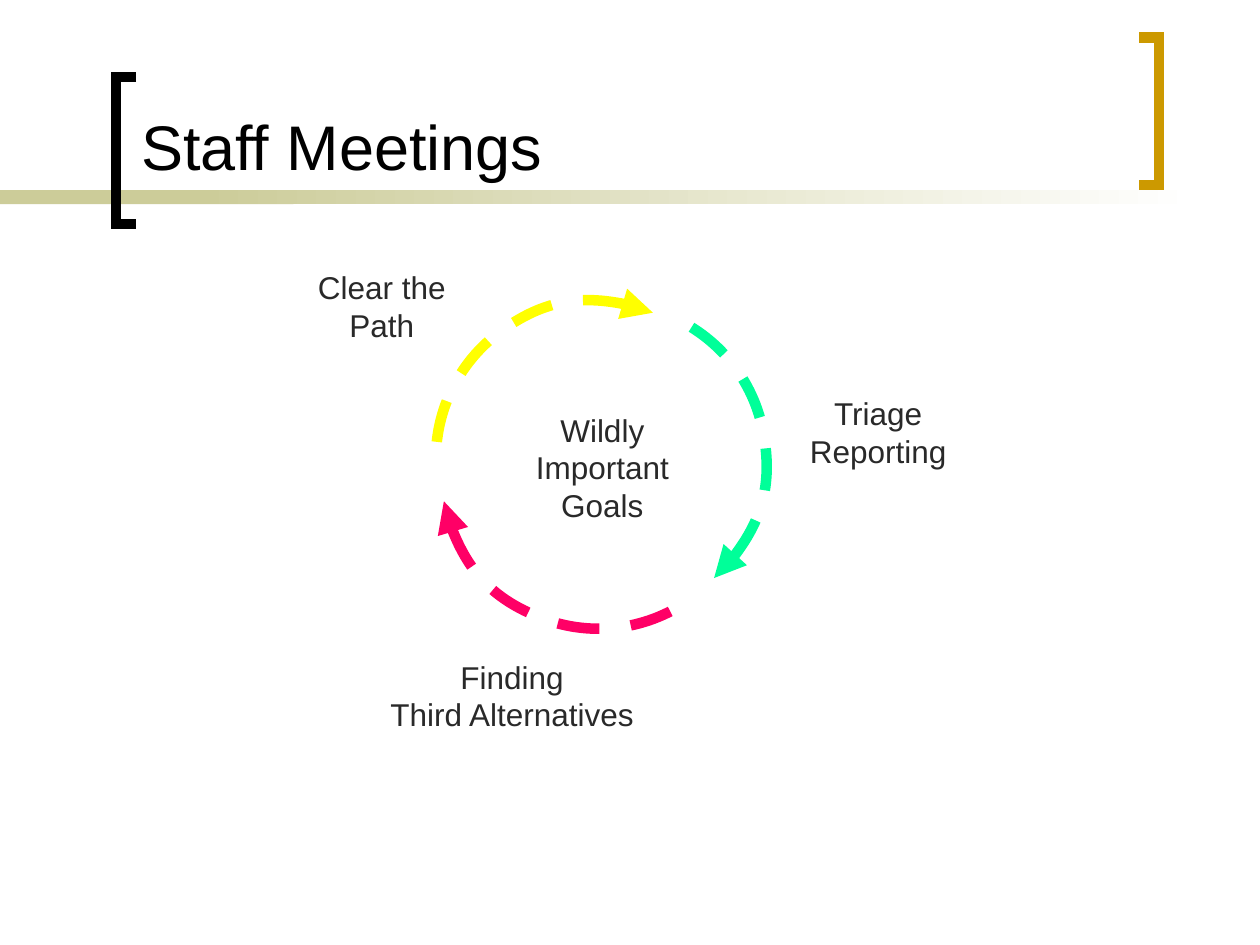
"""Build the Staff Meetings slide: a cycle of three dashed arrows around the goals."""
from math import cos, radians, sin, tan

from pptx import Presentation
from pptx import util as u
from pptx.dml.color import RGBColor
from pptx.enum import dml, shapes, text
from pptx.oxml.ns import qn

COLOURS = {"black": "000000", "gold": "CC9900", "sand": "CCCC99", "white": "FFFFFF",
           "yellow": "FFFF00", "green": "00FF99", "pink": "FF0066", "ink": "292929"}
FONT = "Arial"
TITLE = ("Staff Meetings", (1.02, 0.33, 7.83, 1.17))
LABELS = [
    (("Wildly", "Important", "Goals"), (4.14, 3.21, 1.28, 1)),
    (("Triage", "Reporting"), (6.32, 3.08, 1.3, 0.7)),
    (("Finding", "Third Alternatives"), (2.98, 5.17, 2.17, 0.7)),
    (("Clear the", "Path"), (2.41, 2.08, 1.24, 0.7)),
]
ARROWS = [("yellow", (4.71, 3.64), -67.8), ("green", (4.83, 3.66), 47.9),
          ("pink", (4.75, 3.74), 169)]
RADIUS, SWEEP, CURVES = 1.25, 116, 2
BRACKETS = [("black", 1.08, 0.92, 0.61), ("gold", 9.04, 9.2, 0.3)]
BRACKET_HEIGHT = 1.17
BAND_TOP, BAND_HEIGHT = 1.51, 0.11
SOLID_BAND, FADING_BAND = (0, 2.33), (1.58, 7.92)


def colour(name):
    return RGBColor.from_string(COLOURS[name])


def inches(values):
    return [u.Inches(value) for value in values]


def style_font(para, size, name):
    para.font.name, para.font.size = FONT, u.Pt(size)
    para.font.color.rgb = colour(name)


def add_band(page, left, width):
    band = page.shapes.add_shape(shapes.MSO_SHAPE.RECTANGLE,
                                 *inches((left, BAND_TOP, width, BAND_HEIGHT)))
    band.shadow.inherit = False
    band.line.fill.background()
    return band


def add_line_part(outline, tag, **attributes):
    line = outline.line._get_or_add_ln()
    line.append(line.makeelement(qn(tag), attributes))


def add_outline(page, points, name):
    start, *rest = [inches(point) for point in points]
    builder = page.shapes.build_freeform(*start)
    builder.add_line_segments(rest, close=False)
    outline = builder.convert_to_shape()
    outline.shadow.inherit = False
    outline.fill.background()
    outline.line.color.rgb = colour(name)
    outline.line.width = u.Pt(6)
    return outline


def arc_points(centre, head_angle):
    step = radians(SWEEP / CURVES)
    reach = 4 / 3 * tan(step / 4)

    def place(angle, pull):
        return (centre[0] + RADIUS * (cos(angle) + pull * sin(angle)),
                centre[1] + RADIUS * (sin(angle) - pull * cos(angle)))

    points = [place(radians(head_angle), 0)]
    for curve in range(CURVES):
        begin = radians(head_angle) - curve * step
        end = begin - step
        points += [place(begin, reach), place(end, -reach), place(end, 0)]
    return points


def bend(outline):
    """Turn each three straight segments into one cubic curve."""
    segments = list(outline._element.iter(qn("a:lnTo")))
    for first in range(0, len(segments), 3):
        curve = segments[first].makeelement(qn("a:cubicBezTo"), {})
        segments[first].addprevious(curve)
        for segment in segments[first:first + 3]:
            curve.append(segment[0])
            segment.getparent().remove(segment)


def add_arrow(page, name, centre, head_angle):
    arrow = add_outline(page, arc_points(centre, head_angle), name)
    bend(arrow)
    arrow.line.dash_style = dml.MSO_LINE.DASH
    add_line_part(arrow, "a:headEnd", type="triangle")


def add_label(page, lines, place):
    frame = page.shapes.add_textbox(*inches(place)).text_frame
    frame.word_wrap = False
    frame.auto_size = text.MSO_AUTO_SIZE.SHAPE_TO_FIT_TEXT
    frame.text = "\n".join(lines)
    for para in frame.paragraphs:
        para.alignment = text.PP_ALIGN.CENTER
        style_font(para, 18, "ink")


def main():
    deck = Presentation()
    deck.slide_width, deck.slide_height = inches((10, 7.5))
    page = deck.slides.add_slide(deck.slide_layouts[5])

    solid = add_band(page, *SOLID_BAND)
    solid.fill.solid()
    solid.fill.fore_color.rgb = colour("sand")
    fading = add_band(page, *FADING_BAND)
    fading.fill.gradient()
    fading.fill.gradient_angle = 0
    for stop, name, position in zip(fading.fill.gradient_stops, ("sand", "white"), (0, 1)):
        stop.color.rgb = colour(name)
        stop.position = position

    for name, tip, spine, top in BRACKETS:
        bottom = top + BRACKET_HEIGHT
        bracket = add_outline(
            page, [(tip, top), (spine, top), (spine, bottom), (tip, bottom)], name)
        add_line_part(bracket, "a:miter", lim="800000")

    words, place = TITLE
    title = page.shapes.title
    title.left, title.top, title.width, title.height = inches(place)
    title.text_frame.text = words
    title.text_frame.vertical_anchor = text.MSO_ANCHOR.BOTTOM
    para = title.text_frame.paragraphs[0]
    para.alignment = text.PP_ALIGN.LEFT
    style_font(para, 36, "black")

    for arrow in ARROWS:
        add_arrow(page, *arrow)
    for label in LABELS:
        add_label(page, *label)
    deck.save("out.pptx")


if __name__ == "__main__":
    main()
